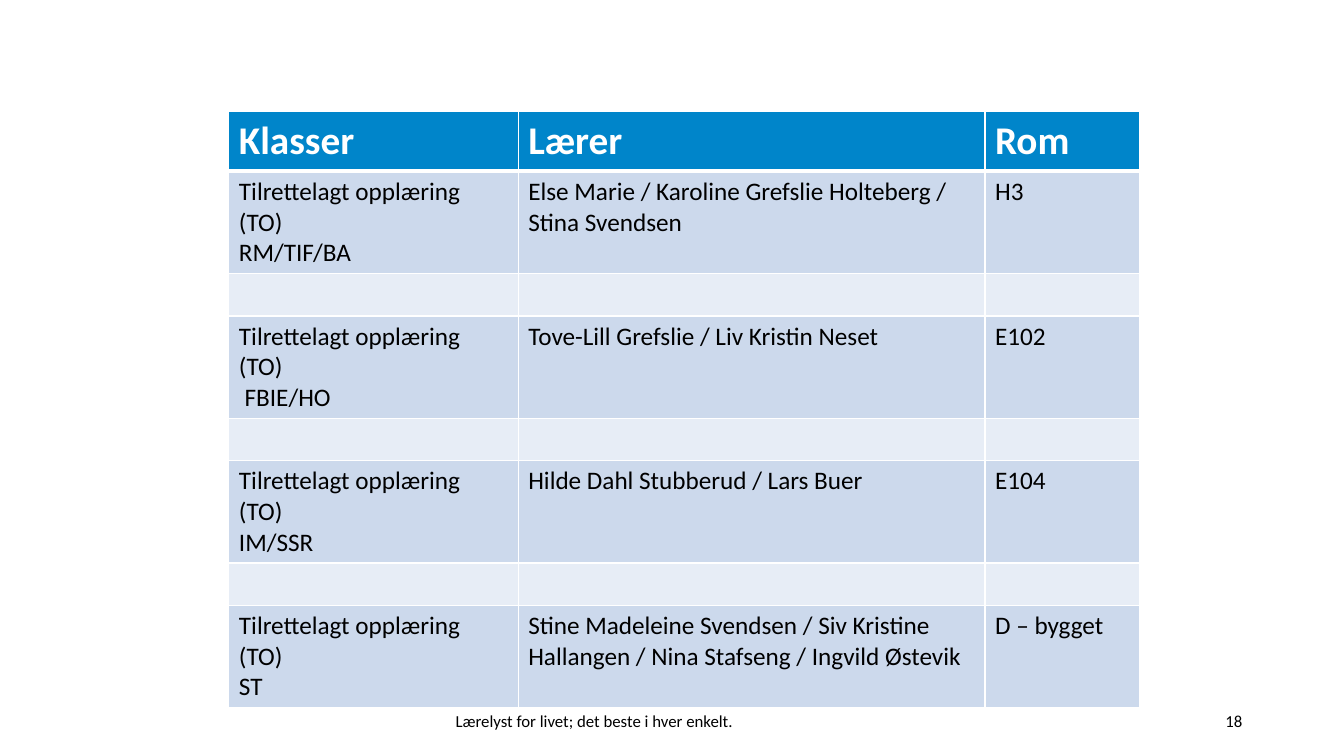
"""Build a slide with a table of classes, teachers and rooms."""
from lxml.etree import SubElement
from pptx import Presentation
from pptx.dml.color import RGBColor as Rgb
from pptx.enum.text import MSO_ANCHOR as Anchor, PP_ALIGN as Align
from pptx.oxml.ns import qn
from pptx.util import Inches, Pt

HEAD = ("Klasser", "Lærer", "Rom")
LEVEL = "Tilrettelagt opplæring (TO)"
ROWS = [
    ("RM/TIF/BA", "Else Marie / Karoline Grefslie Holteberg / Stina Svendsen", "H3"),
    (" FBIE/HO", "Tove-Lill Grefslie / Liv Kristin Neset", "E102"),
    ("IM/SSR", "Hilde Dahl Stubberud / Lars Buer", "E104"),
    ("ST", "Stine Madeleine Svendsen / Siv Kristine Hallangen / "
           "Nina Stafseng / Ingvild Østevik", "D – bygget"),
]
NOTES = [
    ("Lærelyst for livet; det beste i hver enkelt.", 4.42, 4.5, Align.LEFT),
    ("18", 9.42, 3, Align.RIGHT),
]
WIDTHS = (2.87, 4.63, 1.53)
HEAD_H, ROW_H = 0.59, 0.42
COLORS = {"head": "0085CA", "row": "CCD9EC", "gap": "E7EDF6",
          "white": "FFFFFF", "text": "000000"}
FONT = "Calibri"


def color(name):
    return Rgb.from_string(COLORS[name])


def write(frame, lines, size, tint, bold=False, align=None):
    for i, line in enumerate(lines):
        para = frame.paragraphs[0] if i == 0 else frame.add_paragraph()
        para.alignment = align
        run = para.add_run()
        run.text = line
        font = run.font
        font.name, font.size, font.bold = FONT, Pt(size), bold
        font.color.rgb = color(tint)


def border(cell, sides):
    props = cell._tc.get_or_add_tcPr()
    for side, width in sides.items():
        line = SubElement(props, qn(f"a:ln{side}"), w=str(Pt(width)))
        fill = SubElement(line, qn("a:solidFill"))
        SubElement(fill, qn("a:srgbClr"), val=COLORS["white"])


def add_grid(slide):
    grid = [("head", [[text] for text in HEAD])]
    for i, (group, staff, room) in enumerate(ROWS):
        if i:
            grid.append(("gap", [[], [], []]))
        grid.append(("row", [[LEVEL, group], [staff], [room]]))
    high = HEAD_H + ROW_H * (len(grid) - 1)
    table = slide.shapes.add_table(
        len(grid), len(WIDTHS), Inches(2.27), Inches(1.11),
        Inches(sum(WIDTHS)), Inches(high)).table
    for col, width in zip(table.columns, WIDTHS):
        col.width = Inches(width)
    for r, (kind, texts) in enumerate(grid):
        top = kind == "head"
        table.rows[r].height = Inches(HEAD_H if top else ROW_H)
        for c, lines in enumerate(texts):
            cell = table.cell(r, c)
            border(cell, {"L": 1, "R": 1, "T": 3 if r == 1 else 1,
                          "B": 3 if top else 1})
            cell.fill.solid()
            cell.fill.fore_color.rgb = color(kind)
            write(cell.text_frame, lines, 28 if top else 18,
                  "white" if top else "text", top)


def main():
    deck = Presentation()
    deck.slide_width, deck.slide_height = Inches(13.33), Inches(7.5)
    slide = deck.slides.add_slide(deck.slide_layouts[6])
    add_grid(slide)
    for text, left, width, align in NOTES:
        frame = slide.shapes.add_textbox(
            Inches(left), Inches(6.95), Inches(width), Inches(0.4)).text_frame
        frame.word_wrap = True
        frame.vertical_anchor = Anchor.MIDDLE
        write(frame, [text], 12, "text", align=align)
    deck.save("out.pptx")


if __name__ == "__main__":
    main()
